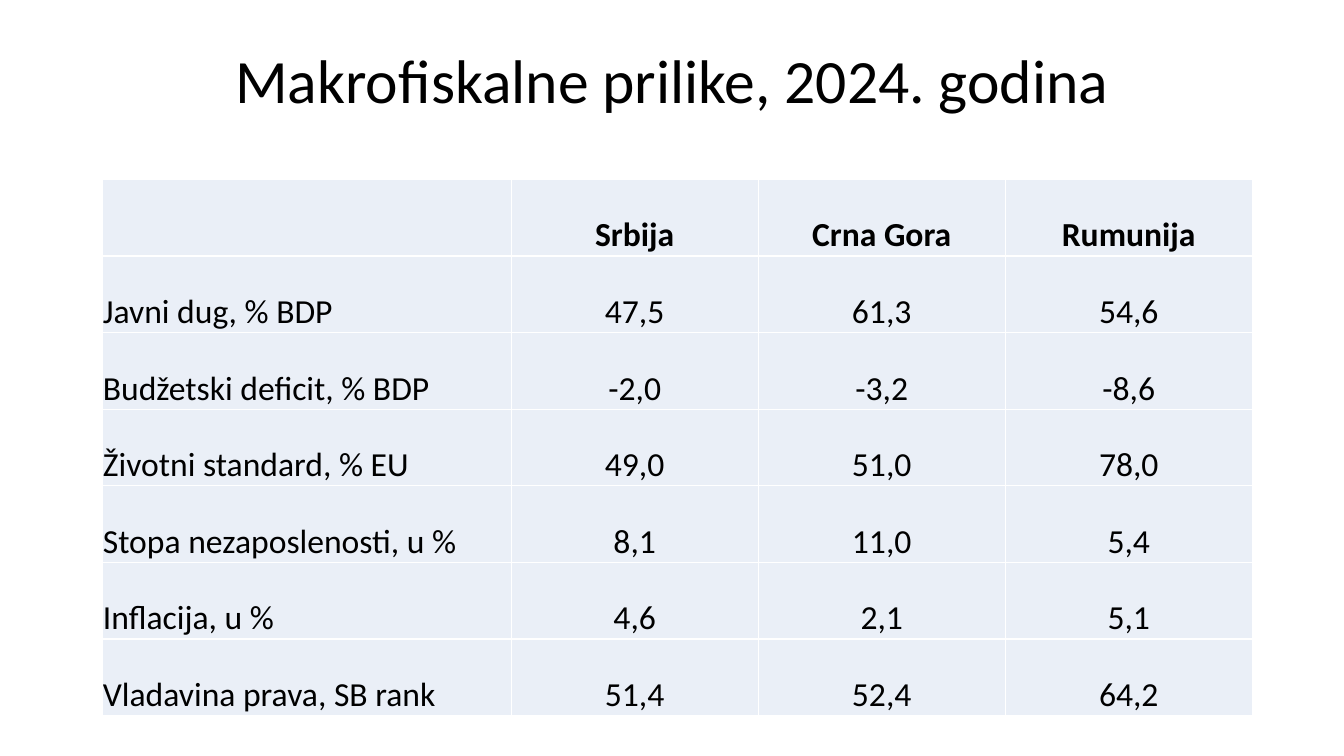
import pptx
import pptx.dml.color
import pptx.enum.text
import pptx.oxml
import pptx.oxml.ns
import pptx.util

PX = 9144  # 100 px to the inch
FONT = "Calibri"
INK, PALE, WHITE = "000000", "EAEFF7", "FFFFFF"
ALIGN = pptx.enum.text.PP_ALIGN
ANCHOR = pptx.enum.text.MSO_ANCHOR

ROWS = [
    ("", "Srbija", "Crna Gora", "Rumunija"),
    ("Javni dug, % BDP", "47,5", "61,3", "54,6"),
    ("Budžetski deficit, % BDP", "-2,0", "-3,2", "-8,6"),
    ("Životni standard, % EU", "49,0", "51,0", "78,0"),
    ("Stopa nezaposlenosti, u %", "8,1", "11,0", "5,4"),
    ("Inflacija, u %", "4,6", "2,1", "5,1"),
    ("Vladavina prava, SB rank", "51,4", "52,4", "64,2"),
]


def px(count):
    return pptx.util.Emu(count * PX)


def paint(target, color):
    """Give a fill or a font its solid colour."""
    if hasattr(target, "solid"):
        target.solid()
        target.fore_color.rgb = pptx.dml.color.RGBColor.from_string(color)
    else:
        target.color.rgb = pptx.dml.color.RGBColor.from_string(color)


def write(frame, text, size, align, bold=False):
    par = frame.paragraphs[0]
    par.alignment = align
    if text:
        run = par.add_run()
        run.text = text
        run.font.name = FONT
        run.font.size = pptx.util.Pt(size)
        run.font.bold = bold
        paint(run.font, INK)
    return par


def rule(cell, color, width):
    """Draw all four borders of a cell; call before the fill is set."""
    props = cell._tc.get_or_add_tcPr()
    for side in "LRTB":
        props.append(pptx.oxml.parse_xml(
            f'<a:ln{side} {pptx.oxml.ns.nsdecls("a")} w="{pptx.util.Pt(width)}">'
            f'<a:solidFill><a:srgbClr val="{color}"/></a:solidFill></a:ln{side}>'))


def add_title(slide, box, text):
    title = slide.shapes.title
    title.left, title.top, title.width, title.height = map(px, box)
    frame = title.text_frame
    frame.word_wrap = True
    frame.vertical_anchor = ANCHOR.MIDDLE
    write(frame, text, 44, ALIGN.CENTER).line_spacing = 0.9


def add_grid(slide, box, rows, first):
    """Place the table; columns after the first share the width left."""
    left, top, width, height = box
    grid = slide.shapes.add_table(len(rows), len(rows[0]), *map(px, box)).table
    rest = (width - first) // (len(rows[0]) - 1)
    for c, col in enumerate(grid.columns):
        col.width = px(rest if c else first)
    for r, row in enumerate(rows):
        grid.rows[r].height = px(height // len(rows))
        for c, text in enumerate(row):
            cell = grid.cell(r, c)
            cell.margin_left = cell.margin_right = 0
            cell.margin_top = cell.margin_bottom = 0
            cell.vertical_anchor = ANCHOR.BOTTOM
            rule(cell, WHITE, 1)
            paint(cell.fill, PALE)
            write(cell.text_frame, text, 24,
                  ALIGN.CENTER if c else ALIGN.LEFT, bold=r == 0)


def main():
    deck = pptx.Presentation()
    deck.slide_width, deck.slide_height = px(1333), px(750)
    slide = deck.slides.add_slide(deck.slide_layouts.get_by_name("Title Only"))
    add_title(slide, (92, 40, 1150, 86), "Makrofiskalne prilike, 2024. godina")
    add_grid(slide, (102, 178, 1140, 532), ROWS, 405)
    deck.save("out.pptx")


if __name__ == "__main__":
    main()
